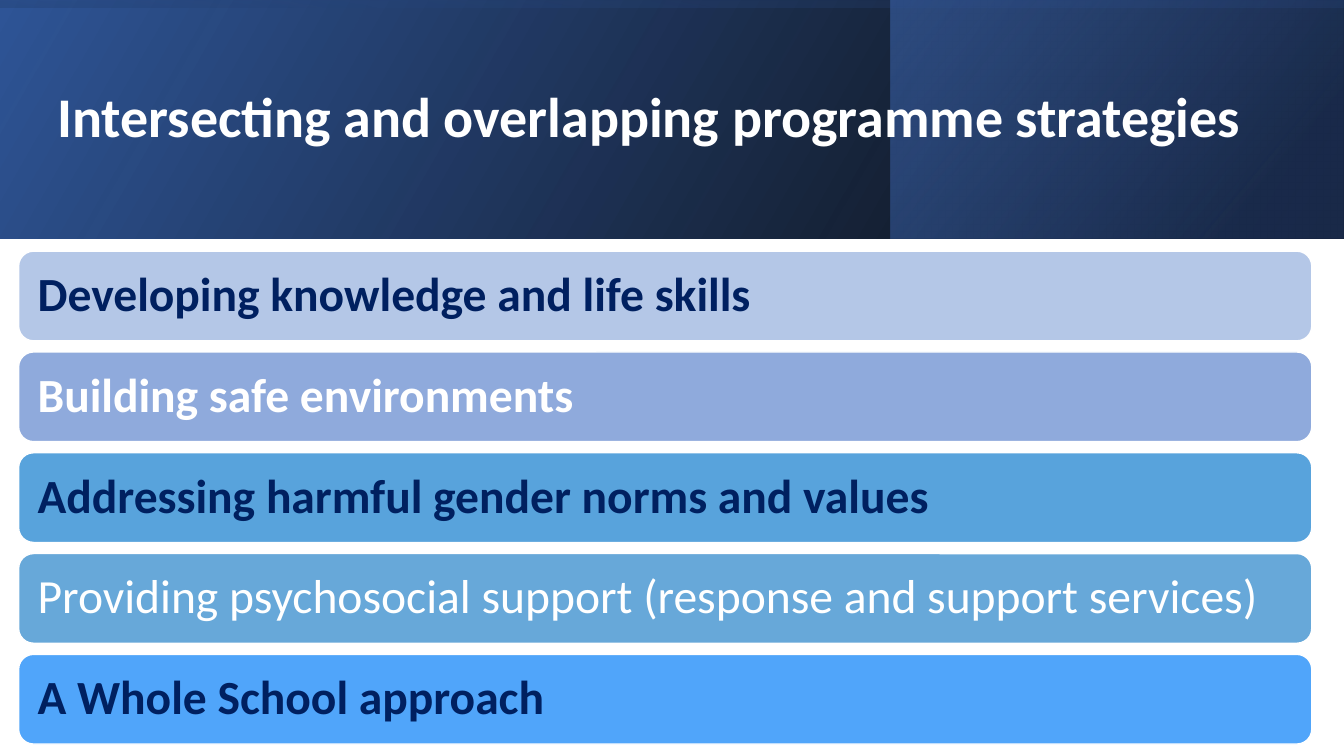
import lxml.etree
import pptx
import pptx.dml.color
import pptx.enum.shapes
import pptx.enum.text
import pptx.oxml
import pptx.oxml.ns
import pptx.util

Cm = pptx.util.Cm
Pt = pptx.util.Pt
RGB = pptx.dml.color.RGBColor.from_string
MSO_SHAPE = pptx.enum.shapes.MSO_SHAPE

COLORS = {
    "white": "FFFFFF",
    "black": "000000",
    "navy": "002060",
    "deep": "203864",
    "blue": "2F5597",
    "bright": "4472C4",
    "pale": "B4C7E7",
    "periwinkle": "8FAADC",
    "azure": "58A3DC",
    "sky": "67A8D9",
    "vivid": "50A5FA",
}


def write(sp, text, size, color="white", bold=True, inset=0.25):
    tf = sp.text_frame
    tf.word_wrap = True
    tf.vertical_anchor = pptx.enum.text.MSO_ANCHOR.MIDDLE
    tf.margin_left = tf.margin_right = Cm(inset)
    p = tf.paragraphs[0]
    p.alignment = pptx.enum.text.PP_ALIGN.LEFT
    p.line_spacing = 0.9
    r = p.add_run()
    r.text = text
    r.font.name = "Calibri"
    r.font.size = Pt(size)
    r.font.bold = bold
    r.font.color.rgb = RGB(COLORS[color])


def fill_gradient(sp, stops, angle):
    nsmap = {"a": pptx.oxml.ns.nsuri("a")}
    qn = pptx.oxml.ns.qn
    grad = lxml.etree.Element(qn("a:gradFill"), nsmap=nsmap, rotWithShape="1")
    gs_list = lxml.etree.SubElement(grad, qn("a:gsLst"))
    for pos, color, opacity in stops:
        gs = lxml.etree.SubElement(gs_list, qn("a:gs"), pos=str(pos * 1000))
        clr = lxml.etree.SubElement(gs, qn("a:srgbClr"), val=COLORS[color])
        lxml.etree.SubElement(clr, qn("a:alpha"), val=str(opacity * 1000))
    lxml.etree.SubElement(grad, qn("a:lin"), ang=str(angle * 60000), scaled="0")
    geom = sp._element.spPr.find(qn("a:prstGeom"))
    geom.addnext(pptx.oxml.parse_xml(lxml.etree.tostring(grad)))


prs = pptx.Presentation()
prs.slide_width = Cm(33.87)
prs.slide_height = Cm(19.05)
s = prs.slides.add_slide(prs.slide_layouts[6])

banner_layers = [
    (0, 0, 33.87, 6.02, 0, [(0, "black", 96), (100, "blue", 100)], 330),
    (22.45, 0, 11.4, 6.02, 0, [(19, "deep", 68), (100, "bright", 48)], 320),
    (13.92, -13.92, 6.02, 33.87, 270, [(23, "blue", 16), (99, "black", 45)], 350),
]
for x, y, w, h, rotation, stops, angle in banner_layers:
    sp = s.shapes.add_shape(MSO_SHAPE.RECTANGLE, Cm(x), Cm(y), Cm(w), Cm(h))
    sp.shadow.inherit = False
    sp.line.fill.background()
    sp.rotation = rotation
    sp._element.spPr.find(pptx.oxml.ns.qn("a:xfrm")).set("flipH", "1")
    fill_gradient(sp, stops, angle)

title = s.shapes.add_textbox(Cm(1.2), Cm(0.82), Cm(32.97), Cm(4.37))
write(title, "Intersecting and overlapping programme strategies", 40)

strategies = [
    ("Developing knowledge and life skills", "pale", "navy", True),
    ("Building safe environments", "periwinkle", "white", True),
    ("Addressing harmful gender norms and values", "azure", "navy", True),
    ("Providing psychosocial support (response and support services)", "sky", "white", False),
    ("A Whole School approach", "vivid", "navy", True),
]
bar_top, bar_pitch = 6.33, 2.54
for i, (text, fill, color, bold) in enumerate(strategies):
    sp = s.shapes.add_shape(
        MSO_SHAPE.ROUNDED_RECTANGLE, Cm(0.47), Cm(bar_top + i * bar_pitch), Cm(32.59), Cm(2.26)
    )
    sp.shadow.inherit = False
    sp.fill.solid()
    sp.fill.fore_color.rgb = RGB(COLORS[fill])
    sp.line.color.rgb = RGB(COLORS["white"])
    sp.line.width = Pt(1)
    write(sp, text, 34, color=color, bold=bold, inset=0.37)

prs.save("out.pptx")
